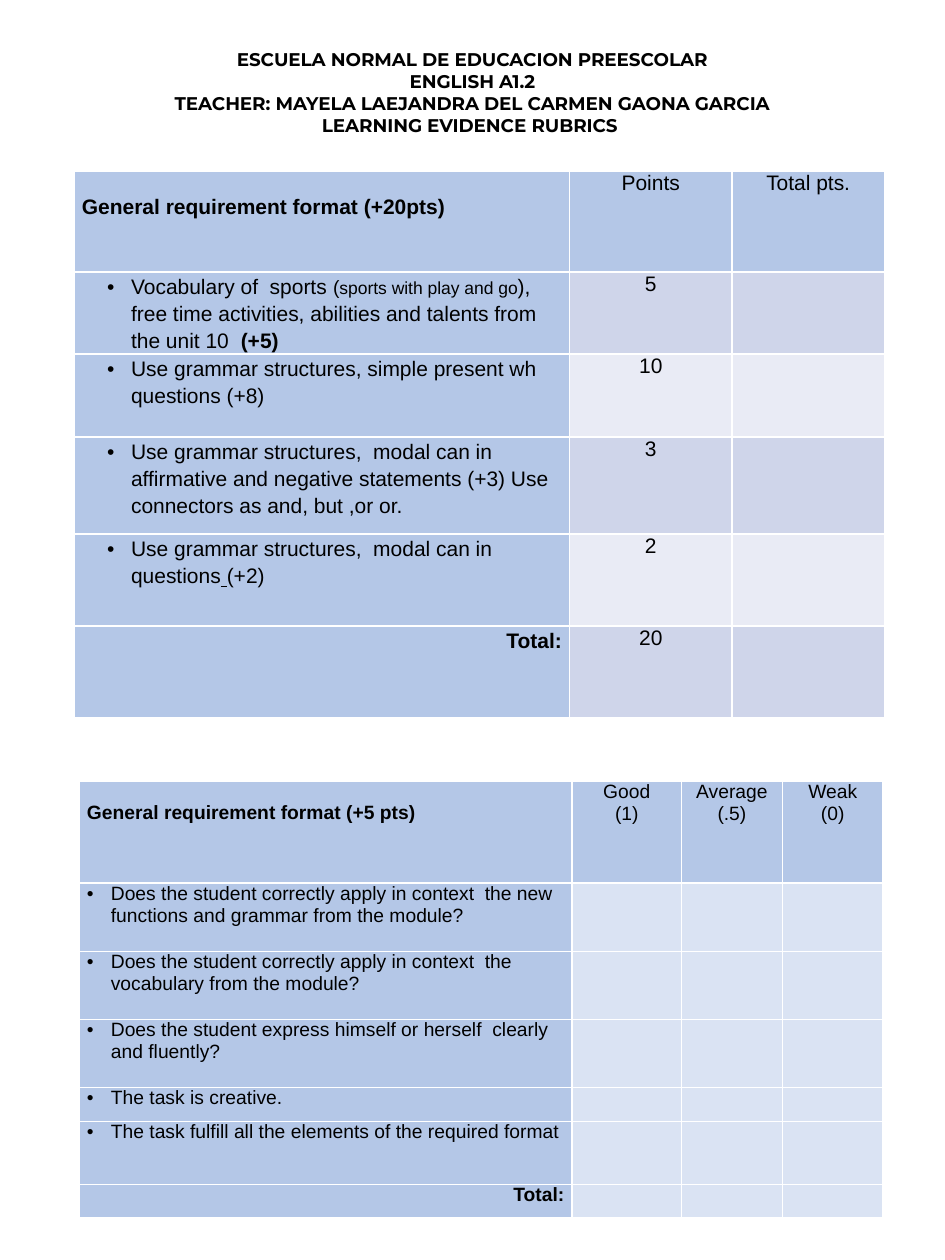
from lxml import etree
from pptx import Presentation
from pptx.dml.color import RGBColor
from pptx.enum.text import MSO_ANCHOR, MSO_AUTO_SIZE, PP_ALIGN
from pptx.oxml.ns import qn
from pptx.util import Inches, Pt

LEFT, MID, RIGHT = PP_ALIGN.LEFT, PP_ALIGN.CENTER, PP_ALIGN.RIGHT
TOP = MSO_ANCHOR.TOP
NO_FIT = MSO_AUTO_SIZE.NONE
COLORS = {"ink": "000000", "head": "B4C7E7", "pale": "DAE3F3",
          "dark": "CFD5EA", "light": "E9EBF5"}

HEADING = ["ESCUELA NORMAL DE EDUCACION PREESCOLAR",
           "ENGLISH A1.2",
           "TEACHER: MAYELA LAEJANDRA DEL CARMEN GAONA GARCIA",
           "LEARNING EVIDENCE RUBRICS "]

POINTS = {
    "cols": [3.93, 1.29, 1.21], "rows": [0.8, 0.65, 0.66, 0.77, 0.73, 0.73],
    "size": 12, "drop": 0.19, "indent": 0.39, "space": 1.15,
    "bands": ["dark", "light"],
    "cells": [
        ["General requirement format (+20pts)", "Points", "Total pts."],
        [[("Vocabulary of  sports ", {}), ("(", {"size": Pt(11)}),
          ("sports with play and go", {"size": Pt(10)}),
          ("), free time activities, abilities and talents from the unit 10  ", {}),
          ("(+5)", {"bold": True})], "5", ""],
        ["Use grammar structures, simple present wh questions (+8)", "10", ""],
        ["Use grammar structures,  modal can in affirmative and negative "
         "statements (+3) Use connectors as and, but ,or or.", "3", ""],
        [[("Use grammar structures,  modal can in questions", {}),
          (" ", {"italic": True, "underline": True}), ("(+2)", {})], "2", ""],
        ["Total:", "20", ""],
    ],
}

SCALE = {
    "cols": [3.91, 0.87, 0.8, 0.8], "rows": [0.81, 0.54, 0.54, 0.54, 0.27, 0.5, 0.27],
    "size": 11, "drop": 0.17, "indent": 0.19, "space": 1.0, "bands": ["pale"],
    "cells": [
        ["General requirement format (+5 pts)", "Good\n(1)", "Average\n(.5)", "Weak\n(0)"],
        ["Does the student correctly apply in context  the new functions and "
         "grammar from the module?", "", "", ""],
        ["Does the student correctly apply in context  the vocabulary from the module?",
         "", "", ""],
        ["Does the student express himself or herself  clearly and fluently?", "", "", ""],
        ["The task is creative.", "", "", ""],
        ["The task fulfill all the elements of the required format", "", "", ""],
        ["Total:", "", "", ""],
    ],
}


def rgb(name):
    """Return the named colour."""
    return RGBColor.from_string(COLORS[name])


def style(para, face, size, bold, align):
    """Set the font and alignment of a paragraph."""
    para.alignment = align
    font = para.font
    font.name, font.size, font.bold = face, Pt(size), bold
    font.color.rgb = rgb("ink")


def bullet(para, indent):
    """Give a paragraph a hanging round bullet."""
    props = para._p.get_or_add_pPr()
    props.set("marL", str(Inches(indent)))
    props.set("indent", str(-Inches(0.19)))
    etree.SubElement(props, qn("a:buFont")).set("typeface", "Arial")
    etree.SubElement(props, qn("a:buChar")).set("char", "•")


def write(frame, text):
    """Write plain text or a list of styled runs."""
    if isinstance(text, str):
        frame.text = text
        return
    for part, looks in text:
        run = frame.paragraphs[0].add_run()
        run.text = part
        for key, value in looks.items():
            setattr(run.font, key, value)


def fill_cell(cell, text, row, col, spec):
    """Fill one rubric cell according to its place in the table."""
    first, last = row == 0, row == len(spec["rows"]) - 1
    lead = col == 0
    bands = spec["bands"]
    cell.fill.solid()
    cell.fill.fore_color.rgb = rgb(
        "head" if first or lead else bands[(row - 1) % len(bands)])
    cell.margin_left = cell.margin_right = Inches(0.06)
    cell.margin_top = Inches(spec["drop"] if first and lead else 0)
    cell.margin_bottom = 0
    write(cell.text_frame, text)
    align = MID if not lead else RIGHT if last else LEFT
    for para in cell.text_frame.paragraphs:
        if lead and not first:
            para.line_spacing = spec["space"]
            if not last:
                bullet(para, spec["indent"])
        style(para, "Arial", spec["size"], lead and (first or last), align)
        if not text:
            end = etree.SubElement(para._p, qn("a:endParaRPr"))
            end.set("sz", str(spec["size"] * 100))


def add_rubric(slide, box, spec):
    """Add a rubric table in the given box."""
    cells = spec["cells"]
    table = slide.shapes.add_table(len(cells), len(cells[0]), *map(Inches, box)).table
    for col, width in zip(table.columns, spec["cols"]):
        col.width = Inches(width)
    for row, height in zip(table.rows, spec["rows"]):
        row.height = Inches(height)
    for r, line in enumerate(cells):
        for c, text in enumerate(line):
            fill_cell(table.cell(r, c), text, r, c, spec)


def add_title(slide, box):
    """Place the school heading in the given box."""
    title = slide.shapes.title
    title.left, title.top, title.width, title.height = map(Inches, box)
    frame = title.text_frame
    frame.text = "\n".join(HEADING)
    frame.auto_size, frame.word_wrap = NO_FIT, True
    frame.vertical_anchor = TOP
    for para in frame.paragraphs:
        para.space_before = Pt(0)
        style(para, "Montserrat", 10.5, True, MID)


def main():
    """Build the rubric slide and save it."""
    deck = Presentation()
    deck.slide_width, deck.slide_height = Inches(7.5), Inches(10)
    slide = deck.slides.add_slide(deck.slide_layouts[5])
    add_rubric(slide, (0.63, 6.2, 6.38, 3.47), SCALE)
    add_rubric(slide, (0.59, 1.36, 6.43, 4.34), POINTS)
    add_title(slide, (0.94, 0.33, 5.62, 0.81))
    deck.save("out.pptx")


if __name__ == "__main__":
    main()
